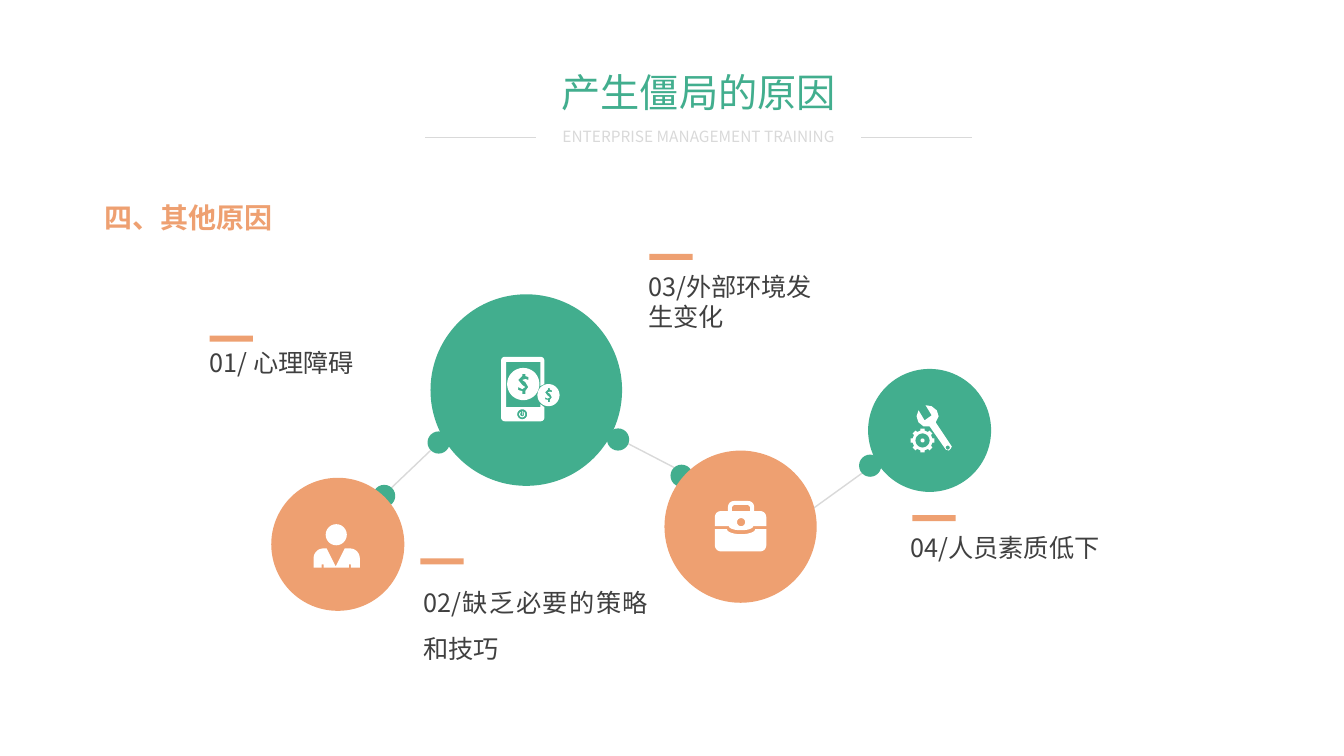
import math

from lxml import etree
from pptx import Presentation
from pptx import util as u
from pptx.dml.color import RGBColor
from pptx.enum import shapes, text
from pptx.oxml import ns

GREEN = RGBColor(0x42, 0xAE, 0x8E)
ORANGE = RGBColor(0xEE, 0xA0, 0x71)
WHITE = RGBColor(0xFF, 0xFF, 0xFF)
GREY = RGBColor(0xD9, 0xD9, 0xD9)
DARK = RGBColor(0x40, 0x40, 0x40)
FONT = "Noto Sans CJK SC"
RECTANGLE = shapes.MSO_SHAPE.RECTANGLE
OVAL = shapes.MSO_SHAPE.OVAL
DOLLAR = [(.02, .07), (.02, .1), (-.01, .1), (-.01, .07), (-.05, .06), (-.05, .03),
          (-.01, .05), (.02, .03), (-.01, .01), (-.05, -.04), (-.01, -.08), (-.01, -.1),
          (.02, -.1), (.02, -.08), (.05, -.07), (.05, -.04), (.02, -.05), (-.01, -.04),
          (.02, -.02), (.05, .03)]


def paint(shape, color):
    """Give a shape a flat fill without line or shadow."""
    shape.shadow.inherit = False
    shape.fill.solid()
    shape.fill.fore_color.rgb = color
    shape.line.fill.background()


def add_block(slide, kind, left, top, width, height, color):
    """Add a flat preset shape."""
    box = [u.Inches(value) for value in (left, top, width, height)]
    paint(slide.shapes.add_shape(kind, *box), color)


def add_outline(slide, left, top, *contours):
    """Add a white freeform whose inner contours are holes."""
    builder = None
    for contour in contours:
        points = [(x * 1000, y * 1000) for x, y in contour]
        if builder is None:
            builder = slide.shapes.build_freeform(*points[0], scale=u.Inches(1) / 1000)
        else:
            builder.move_to(*points[0])
        builder.add_line_segments(points[1:], close=True)
    paint(builder.convert_to_shape(u.Inches(left), u.Inches(top)), WHITE)


def arc(x, y, radius, start=0, end=360, height=None):
    """Return points along an arc, with angles in degrees clockwise from the right."""
    steps = max(8, abs(end - start) // 10)
    angles = [math.radians(start + (end - start) * i / steps) for i in range(steps + 1)]
    return [(x + radius * math.cos(a), y + (height or radius) * math.sin(a)) for a in angles]


def add_line(slide, start, end, width):
    """Add a thin grey line between two points."""
    ends = [u.Inches(value) for value in (*start, *end)]
    line = slide.shapes.add_connector(shapes.MSO_CONNECTOR.STRAIGHT, *ends)
    line.line.color.rgb = GREY
    line.line.width = u.Pt(width)
    etree.SubElement(line._element.spPr, ns.qn("a:effectLst"))


def write(shape, words, size, color, bold=False, align=text.PP_ALIGN.LEFT, spacing=1.0, inset=None):
    """Fill a text shape with one formatted paragraph."""
    frame = shape.text_frame
    settings = {"word_wrap": True, "vertical_anchor": text.MSO_ANCHOR.TOP,
                "auto_size": text.MSO_AUTO_SIZE.NONE}
    if inset is not None:
        settings.update({f"margin_{side}": inset for side in ("left", "top", "right", "bottom")})
    for name, value in settings.items():
        setattr(frame, name, value)
    paragraph = frame.paragraphs[0]
    paragraph.alignment = align
    paragraph.line_spacing = spacing
    run = paragraph.add_run()
    run.text = words
    for name, value in {"size": u.Pt(size), "bold": bold, "name": FONT}.items():
        setattr(run.font, name, value)
    run.font.color.rgb = color
    east_asian = etree.SubElement(run.font._element, ns.qn("a:ea"))
    east_asian.set("typeface", FONT)


def add_text(slide, left, top, width, height, words, size, color, **options):
    """Add a text box."""
    box = [u.Inches(value) for value in (left, top, width, height)]
    write(slide.shapes.add_textbox(*box), words, size, color, **options)


def add_header(slide, left, top, width):
    """Place the title, its subtitle and the lines beside it."""
    title = slide.shapes.title
    box = {"left": left + 1.14, "top": top, "width": 3.14, "height": .57}
    for name, value in box.items():
        setattr(title, name, u.Inches(value))
    center = text.PP_ALIGN.CENTER
    write(title, "产生僵局的原因", 28, GREEN, align=center)
    add_text(slide, left + 1.1, top + .58, 3.22, .29, "ENTERPRISE MANAGEMENT TRAINING",
             11, GREY, align=center)
    for x in (left, left + width - 1.1):
        add_line(slide, (x, top + .73), (x + 1.1, top + .73), .5)


def add_chain(slide, left, top):
    """Place the linked circles and their joints."""
    links = [(1.58, 1.55, 1.15, 1.96), (3.46, 1.44, 4, 1.72), (4.91, 2.46, 5.88, 1.76)]
    joints = [(1.01, 1.89), (1.55, 1.36), (3.33, 1.33), (3.96, 1.69), (5.83, 1.59)]
    circles = [(1.58, 0, 1.9, GREEN), (5.92, .74, 1.22, GREEN)]
    circles += [(x, y, .22, GREEN) for x, y in joints]
    circles += [(3.9, 1.55, 1.51, ORANGE), (0, 1.82, 1.32, ORANGE)]
    for x1, y1, x2, y2 in links:
        add_line(slide, (left + x1, top + y1), (left + x2, top + y2), 1)
    for x, y, size, color in circles:
        add_block(slide, OVAL, left + x, top + y, size, size, color)


def add_briefcase(slide, left, top):
    """Draw the briefcase icon."""
    add_outline(slide, left, top,
                [(0, .28), *arc(.26, .28, .14, 180, 0, .05), (.51, .28),
                 *arc(.45, .44, .06, 0, 90), *arc(.06, .44, .06, 90, 180)])
    add_outline(slide, left, top,
                [(0, .25), *arc(.26, .25, .12, 180, 0, .04), (.51, .25),
                 *arc(.45, .16, .06, 360, 270), (.39, .1), *arc(.33, .06, .06, 360, 270),
                 *arc(.19, .06, .06, 270, 180), (.13, .1), *arc(.06, .16, .06, 270, 180)],
                [(.17, .1), (.17, .06), (.19, .04), (.33, .04), (.35, .06), (.35, .1)],
                arc(.26, .21, .04))


def add_phone(slide, left, top):
    """Draw the phone icon with two coins."""
    add_outline(slide, left, top,
                [(.39, .5), (.05, .5), (.05, .05), (.39, .05), (.39, .29), (.43, .27),
                 *arc(.39, .04, .04, 360, 270), *arc(.04, .04, .04, 270, 180),
                 *arc(.04, .6, .04, 180, 90), *arc(.39, .6, .04, 90, 0),
                 (.43, .5), (.39, .47)], arc(.21, .57, .05))
    add_outline(slide, left, top, arc(.21, .57, .03, -50, 230) + arc(.21, .57, .02, 230, -50))
    add_block(slide, RECTANGLE, left + .21, top + .54, .01, .04, WHITE)
    for x, y, radius in ((.22, .27, .16), (.47, .38, .11)):
        scale = radius / .16
        sign = [(x + dx * scale, y + dy * scale) for dx, dy in DOLLAR]
        add_outline(slide, left, top, arc(x, y, radius), sign)


def add_person(slide, left, top):
    """Draw the person icon."""
    add_block(slide, OVAL, left + .12, top, .21, .21, WHITE)
    add_outline(slide, left, top,
                [(.08, .43), (.08, .4), (.1, .4), (.1, .43), (.35, .43), (.35, .4),
                 (.37, .4), (.37, .43), (.46, .43), *arc(.36, .34, .1, 360, 270),
                 (.31, .24), (.22, .42), (.13, .24), *arc(.1, .34, .1, 270, 180), (0, .43)])


def add_tools(slide, left, top):
    """Draw the wrench and gear icon."""
    add_outline(slide, left, top,
                [(.41, .42), (.25, .18), (.28, .12), (.26, .06), (.21, .02), (.15, .01),
                 (.21, .11), (.14, .16), (.08, .06), (.06, .12), (.08, .18), (.13, .22),
                 (.19, .22), (.35, .45), (.38, .46), (.4, .44)], arc(.37, .43, .02))
    teeth = [(radius, tooth * 45 + turn) for tooth in range(8)
             for radius, turn in ((.1, -12), (.12, -10), (.12, 10), (.1, 12))]
    gear = [(.12 + radius * math.cos(math.radians(angle)),
             .36 + radius * math.sin(math.radians(angle))) for radius, angle in teeth]
    add_outline(slide, left, top, gear, arc(.12, .36, .07))
    add_block(slide, OVAL, left + .1, top + .34, .04, .04, WHITE)


def add_reason(slide, bar, box, words, **options):
    """Place one numbered reason under its short bar."""
    add_block(slide, RECTANGLE, *bar, .43, .06, ORANGE)
    add_text(slide, *box, words, 18, DARK, inset=0, **options)


def build_slide(presentation):
    """Build the slide of reasons."""
    slide = presentation.slides.add_slide(presentation.slide_layouts[5])
    add_header(slide, 4.22, .63, 5.42)
    add_text(slide, .94, 1.94, 6.75, .44, "四、其他原因", 20, ORANGE, bold=True)
    add_chain(slide, 2.69, 2.92)
    add_briefcase(slide, 7.09, 4.97)
    add_phone(slide, 4.97, 3.54)
    add_person(slide, 3.11, 5.2)
    add_tools(slide, 9.03, 4.01)
    add_reason(slide, (2.08, 3.33), (2.08, 3.45, 2.51, .3), "01/ 心理障碍")
    add_reason(slide, (4.17, 5.54), (4.2, 5.68, 2.23, .86), "02/缺乏必要的策略和技巧",
               align=text.PP_ALIGN.JUSTIFY, spacing=1.5)
    add_reason(slide, (6.44, 2.52), (6.43, 2.69, 1.83, .61), "03/外部环境发生变化")
    add_reason(slide, (9.05, 5.11), (9.03, 5.28, 3.39, .3), "04/人员素质低下")


def main():
    """Create and save the presentation."""
    presentation = Presentation()
    presentation.slide_width = u.Inches(13.33)
    presentation.slide_height = u.Inches(7.5)
    build_slide(presentation)
    presentation.save("out.pptx")


if __name__ == "__main__":
    main()
